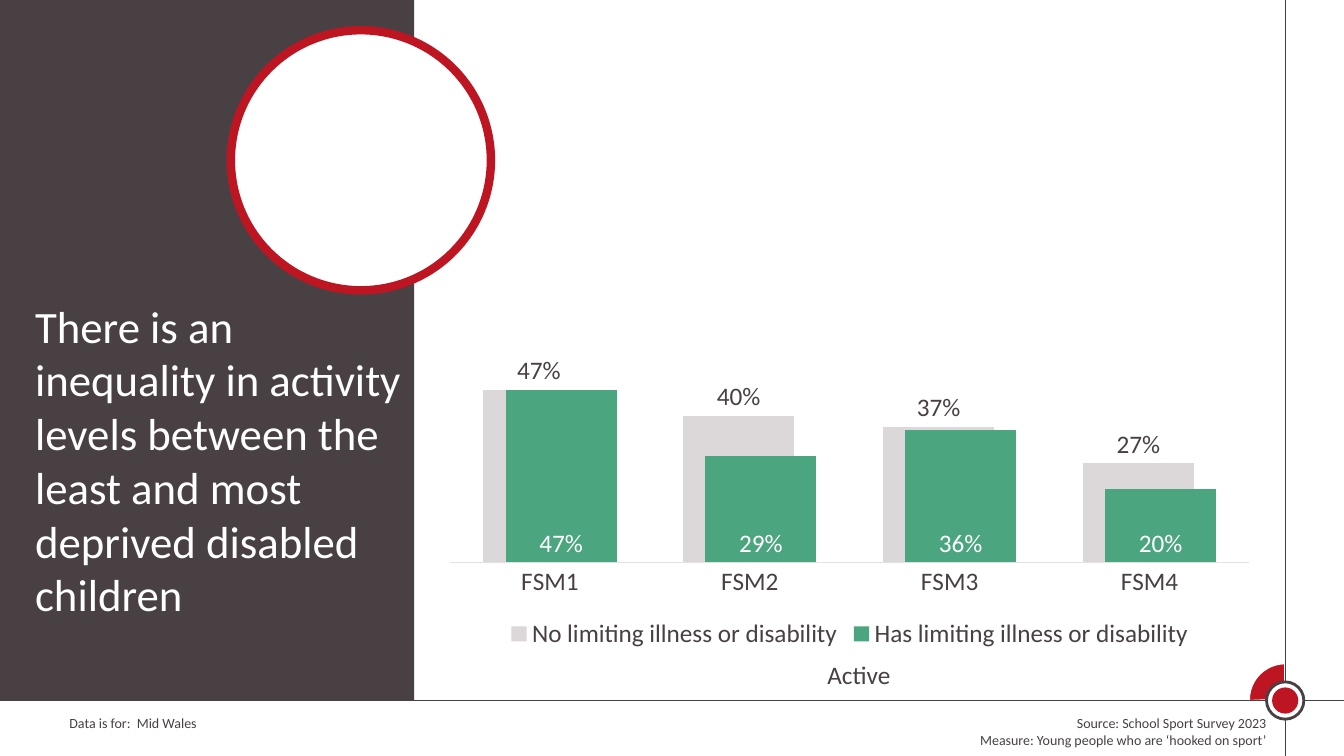
import pptx
import pptx.chart.data
import pptx.dml.color
import pptx.enum.chart
import pptx.enum.shapes
import pptx.enum.text
import pptx.oxml
import pptx.util
from dataclasses import dataclass

Chart = pptx.enum.chart
Shape = pptx.enum.shapes.MSO_SHAPE
Align = pptx.enum.text.PP_ALIGN


@dataclass
class Theme:
    face: str = "Calibri"
    dark: str = "484043"
    red: str = "BD1622"
    white: str = "FFFFFF"
    grey: str = "DCD7D9"
    green: str = "4BA57E"
    rule: str = "E5E1E3"
    note: int = 10
    body: int = 18
    head: int = 32


def cell(n):
    """Length of n grid columns or rows, ten to the inch."""
    return pptx.util.Inches(n / 10)


def rgb(code):
    return pptx.dml.color.RGBColor.from_string(code)


def apply(item, **values):
    for name, value in values.items():
        setattr(item, name, value)


class Page:
    def __init__(self, deck, theme):
        self.theme = theme
        self.slide = deck.slides.add_slide(deck.slide_layouts[6])
        self.shapes = self.slide.shapes

    def font(self, font, size, color):
        apply(font, name=self.theme.face, size=pptx.util.Pt(size))
        font.color.rgb = rgb(color)

    def paint(self, item, color):
        item.fill.solid()
        item.fill.fore_color.rgb = rgb(color)

    def stroke(self, line, color, width):
        line.color.rgb = rgb(color)
        line.width = pptx.util.Pt(width)

    def shape(self, kind, x, y, w, h, fill, line=None, width=1):
        item = self.shapes.add_shape(kind, *map(cell, (x, y, w, h)))
        item.shadow.inherit = False
        self.paint(item, fill)
        if line:
            self.stroke(item.line, line, width)
        else:
            item.line.fill.background()
        return item

    def disc(self, x, y, size, *style):
        """Circle placed by its centre."""
        return self.shape(Shape.OVAL, x - size / 2, y - size / 2, size, size, *style)

    def line(self, *ends):
        item = self.shapes.add_connector(
            pptx.enum.shapes.MSO_CONNECTOR.STRAIGHT, *map(cell, ends))
        self.stroke(item.line, self.theme.dark, 1)
        props = item._element.spPr
        props.append(pptx.oxml.parse_xml(
            '<a:effectLst xmlns:a="http://schemas.openxmlformats.org/drawingml/2006/main"/>'))

    def text(self, x, y, w, h, lines, size, color, align=Align.LEFT):
        frame = self.shapes.add_textbox(*map(cell, (x, y, w, h))).text_frame
        apply(frame, word_wrap=True, text="\n".join(lines),
              auto_size=pptx.enum.text.MSO_AUTO_SIZE.SHAPE_TO_FIT_TEXT)
        for para in frame.paragraphs:
            para.alignment = align
            self.font(para.runs[0].font, size, color)

    def bars(self, x, y, w, h, cats, series):
        theme = self.theme
        data = pptx.chart.data.CategoryChartData(number_format="0%")
        data.categories = cats
        for name, values, *_ in series:
            data.add_series(name, values)
        chart = self.shapes.add_chart(
            Chart.XL_CHART_TYPE.COLUMN_CLUSTERED, *map(cell, (x, y, w, h)), data).chart
        apply(chart, has_title=False, has_legend=True)
        apply(chart.legend, position=Chart.XL_LEGEND_POSITION.BOTTOM,
              include_in_layout=False)
        # Axes
        base = chart.category_axis
        none = Chart.XL_TICK_MARK.NONE
        apply(base, major_tick_mark=none, minor_tick_mark=none,
              has_major_gridlines=False)
        self.stroke(base.format.line, theme.rule, 0.75)
        apply(chart.value_axis, minimum_scale=0, maximum_scale=1,
              has_major_gridlines=False, visible=False)
        for part in (chart, chart.legend):
            self.font(part.font, theme.body, theme.dark)
        self.font(base.tick_labels.font, theme.body, theme.dark)
        # Columns and their labels
        plot = chart.plots[0]
        apply(plot, gap_width=60, overlap=80, vary_by_categories=False)
        for row, (_, _, fill, ink, place) in zip(plot.series, series):
            self.paint(row.format, fill)
            apply(row, invert_if_negative=False)
            apply(row.data_labels, show_value=True, position=place,
                  number_format="0%", number_format_is_linked=False)
            self.font(row.data_labels.font, theme.body, ink)


def main():
    deck = pptx.Presentation()
    wide, tall = 133.33, 75
    apply(deck, slide_width=cell(wide), slide_height=cell(tall))
    theme = Theme()
    page = Page(deck, theme)
    mid, foot = 127.5, 69.5

    # Corner badge on the crossing lines
    pie = page.shape(Shape.PIE, mid - 3.6, foot - 3.7, 7.2, 7.2,
                     theme.red, theme.white, 1.5)
    pie.adjustments[0], pie.adjustments[1] = 106.62, 162
    page.line(mid, 0, mid, tall)
    page.line(0, foot, wide, foot)
    page.disc(mid, foot, 3.7, theme.white, theme.dark, 2)
    page.disc(mid, foot, 2.6, theme.red)

    # Side panel with ring and headline
    page.shape(Shape.RECTANGLE, 0, 0, 41.1, foot, theme.dark)
    page.disc(35.8, 15.9, 25.8, theme.white, theme.red, 6)
    page.text(2.5, 29.1, 38.6, 33.3,
              ["There is an inequality in activity levels between the "
               "least and most deprived disabled children"],
              theme.head, theme.white)

    # Footer notes
    page.text(5.9, 70.4, 43.9, 2.7, ["Data is for:  Mid Wales"],
              theme.note, theme.dark)
    page.text(61.9, 70.4, 64.7, 4.4,
              ["Source: School Sport Survey 2023",
               "Measure: Young people who are ‘hooked on sport’"],
              theme.note, theme.dark, Align.RIGHT)

    # Chart and its caption
    page.text(81.1, 64.9, 12.2, 4, ["Active"], theme.body, theme.dark)
    spot = Chart.XL_LABEL_POSITION
    page.bars(43, 18.5, 82.6, 46.4, ["FSM1", "FSM2", "FSM3", "FSM4"], [
        ("No limiting illness or disability", (0.47, 0.4, 0.37, 0.27),
         theme.grey, theme.dark, spot.OUTSIDE_END),
        ("Has limiting illness or disability", (0.47, 0.29, 0.36, 0.2),
         theme.green, theme.white, spot.INSIDE_BASE),
    ])
    deck.save("out.pptx")


if __name__ == "__main__":
    main()
